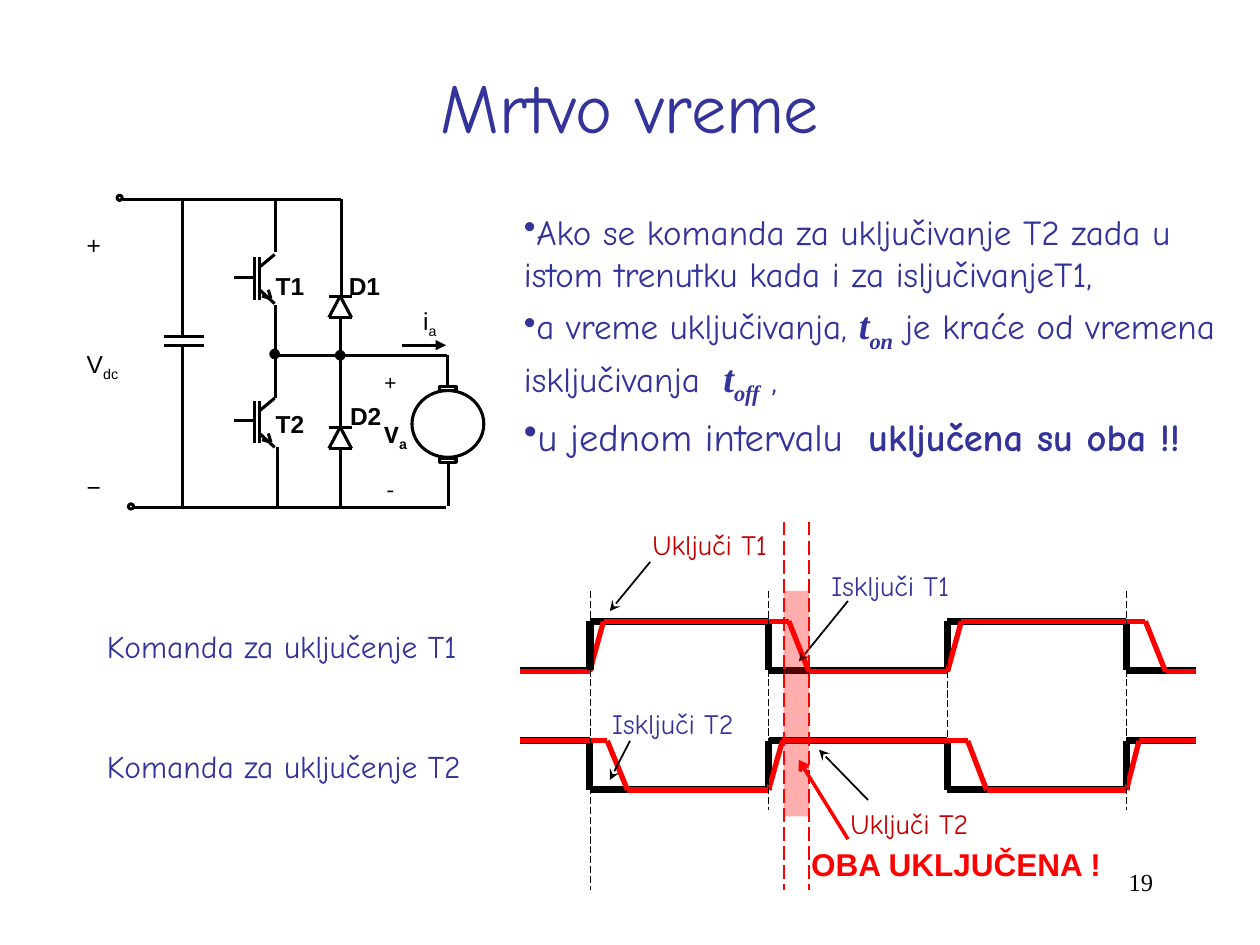
from itertools import pairwise
from lxml.etree import SubElement as Sub
from pptx import Presentation
from pptx.dml.color import RGBColor
from pptx.enum.dml import MSO_LINE as Dash
from pptx.enum.shapes import MSO_CONNECTOR as Link, MSO_SHAPE as Form
from pptx.enum.text import MSO_ANCHOR as Anchor, PP_ALIGN as Align
from pptx.oxml.ns import qn
from pptx.util import Inches, Pt

rgb = RGBColor.from_string
deck = Presentation()
deck.slide_width, deck.slide_height = Inches(10), Inches(7.5)
unit = deck.slide_width / 100
slide = deck.slides.add_slide(deck.slide_layouts[6])
shapes = slide.shapes

BLACK, WHITE, RED, BLUE, DARK = "000000", "FFFFFF", "FF0000", "333399", "C00000"
COMIC, SANS, SERIF, MONO = "Comic Neue", "Arial", "Times New Roman", "Courier New"


def wire(spots, hue=BLACK, wide=1.75, dash=None, head=None):
    for start, end in pairwise(spots):
        link = shapes.add_connector(
            Link.STRAIGHT, *[round(n * unit) for n in (*start, *end)])
        link.line.color.rgb = rgb(hue)
        link.line.width = Pt(wide)
        if dash:
            link.line.dash_style = dash
        props = link._element.spPr
        if head:
            Sub(props.find(qn("a:ln")), qn("a:tailEnd"), type=head)
        Sub(props, qn("a:effectLst"))


def write(place, paras, font=SANS, hue=BLACK, size=14, gap=0, mark=None, align=Align.LEFT):
    box = shapes.add_textbox(*[round(n * unit) for n in place])
    frame = box.text_frame
    frame.word_wrap = True
    for i, runs in enumerate(paras):
        para = frame.add_paragraph() if i else frame.paragraphs[0]
        para.alignment = align
        if i:
            para.space_before = Pt(gap)
        if mark:
            props = para._p.get_or_add_pPr()
            props.set("marL", "0")
            props.set("indent", "0")
            Sub(props, qn("a:buChar"), char=mark)
        for words, *style in runs:
            look = dict(style)
            run = para.add_run()
            run.text = words
            run.font.name = look.get("font", font)
            run.font.size = Pt(look.get("size", size))
            run.font.bold = look.get("bold", False)
            run.font.italic = look.get("italic", False)
            run.font.color.rgb = rgb(hue)
            if "base" in look:
                run._r.get_or_add_rPr().set("baseline", str(look["base"]))
    return frame


bold, low = ("bold", True), ("base", -25000)

high, deep = 49.3, 53.2
top, foot = 58.8, 62.7
edges = [46.8, 61, 75.2, 89.4]
left, right = 41.3, 94.9
for first, second in ((deep, high), (top, foot)):
    spots, now, then = [(left, first)], first, second
    for edge in edges:
        spots += [(edge, now), (edge, then)]
        now, then = then, now
    wire(spots + [(right, now)], wide=4)

wire([(left, 53.3), (46.8, 53.3), (47.9, high), (62.6, high), (64.2, 53.3),
      (75.2, 53.3), (76.3, high), (90.9, high), (92.5, 53.3), (right, 53.3)], RED, 3)
wire([(left, top), (48.2, top), (49.8, foot), (61, foot), (62.1, top),
      (76.8, top), (78.3, foot), (89.4, foot), (90.4, top), (right, top)], RED, 3)

title = write((7.5, 2.1, 85, 12.5), [[("Mrtvo vreme",)]], COMIC, BLUE, 40, align=Align.CENTER)
title.vertical_anchor = Anchor.MIDDLE

math = [("font", SERIF), ("size", 22), bold, ("italic", True)]
write((40.6, 16.2, 59.4, 22), [
    [("Ako se komanda za uključivanje T2 zada u istom trenutku kada i za isljučivanjeT1,",)],
    [("a vreme uključivanja, ",), ("t", *math), ("on", *math, low),
     (" je kraće od vremena isključivanja  ",), ("t", *math), ("off", *math, low), (" ,",)],
    [("u jednom intervalu  ", ("size", 22)), ("uključena su oba !!", ("size", 22), bold)],
], COMIC, BLUE, 20, gap=4, mark="•")
write((71.7, 68.3, 20.8, 5), [[("19",)]], SERIF, align=Align.RIGHT)

for name, x, y in (("T1", 20.9, 21), ("T2", 20.9, 32), ("D1", 26.7, 21), ("D2", 26.8, 31.3)):
    write((x, y, 4.7, 2.5), [[(name, bold)]])

for drop in (0, 11.4):
    for spots in (
        [(20.6, 23.8), (20.6, 20.4)],
        [(20.2, 23.8), (20.2, 20.4)],
        [(21.8, 24.1), (20.6, 23)],
        [(21.8, 20.2), (20.6, 21.2)],
        [(20.1, 22), (18.6, 22)],
        [(21.3, 23), (21.5, 23.7), (20.8, 23.5)],
    ):
        wire([(x, y + drop) for x, y in spots])

for drop in (0, 10.4):
    wire([(26.1, 23.5 + drop), (27.9, 23.5 + drop)])
    wire([(27.9, 25.2 + drop), (26.1, 25.2 + drop), (27, 23.5 + drop), (27.9, 25.2 + drop)])

for spots in (
    [(9.8, 15.8), (27.1, 15.8), (27.1, 23.4)],
    [(27, 25.2), (27, 33.8)],
    [(27, 35.7), (27, 40.3)],
    [(22, 28.2), (35.5, 28.2), (35.5, 30.7)],
    [(35.6, 36.8), (35.6, 40.2)],
    [(35.4, 40.3), (10.4, 40.3)],
    [(21.9, 15.8), (21.9, 20)],
    [(21.9, 24.2), (21.9, 31.6)],
    [(22, 35.5), (22, 40.3)],
    [(13, 26.7), (16.2, 26.7)],
    [(13, 27.4), (16.2, 27.4)],
    [(14.5, 15.8), (14.5, 26.6)],
    [(14.5, 27.5), (14.5, 40.3)],
):
    wire(spots)
wire([(31.9, 27.4), (35.4, 27.4)], head="triangle")

for form, hue, *place in (
    (Form.OVAL, WHITE, 32.7, 31, 5.7, 5.3),
    (Form.RECTANGLE, WHITE, 34.9, 30.7, 1.3, 0.3),
    (Form.RECTANGLE, WHITE, 34.9, 36.4, 1.3, 0.3),
    (Form.OVAL, WHITE, 9.3, 15.5, 0.4, 0.4),
    (Form.OVAL, WHITE, 10.2, 40, 0.4, 0.4),
    (Form.OVAL, BLACK, 21.5, 27.8, 0.6, 0.6),
    (Form.OVAL, BLACK, 26.7, 27.9, 0.6, 0.6),
):
    part = shapes.add_shape(form, *[round(n * unit) for n in place])
    part.shadow.inherit = False
    part.fill.solid()
    part.fill.fore_color.rgb = rgb(hue)
    part.line.color.rgb = rgb(BLACK)
    part.line.width = Pt(1.75)

write((29.5, 28.8, 4.9, 8.8), [
    [("+", ("size", 12))], [("V", bold), ("a", bold, low)], [("-", ("size", 12))],
], MONO, gap=14)
write((32.6, 23.8, 4.7, 2.4), [[("i",), ("a", low)]])
write((5.9, 17.8, 4.7, 14.2), [[("+",)], [("V",), ("dc", low)], [("−",)]], gap=51)

for name, y in (("T2", 58.8), ("T1", 49.3)):
    write((7.5, y, 32.7, 4), [[("Komanda za uključenje " + name,)]], COMIC, BLUE, 18)

for x, y, end in ((46.9, 46.9, 70.6), (61, 46.9, 64.3), (75.2, 50.9, 62.7), (89.4, 46.9, 64.3)):
    wire([(x, y), (x, end)], wide=0.5, dash=Dash.LONG_DASH)
wire([(46.9, high), (46.9, deep)], wide=4)

for words, hue, x, y, start, end in (
    ("Uključi T1", DARK, 50.8, 41.4, (51.6, 44.6), (48.4, 48.5)),
    ("Isključi T1", BLUE, 65, 44.6, (67.3, 47.7), (63.4, 52.5)),
    ("Isključi T2", BLUE, 47.6, 55.6, (50, 58.8), (48.4, 61.9)),
    ("Uključi T2", DARK, 66.5, 63.5, (68.9, 63.5), (65, 59.5)),
):
    write((x, y, 14.4, 3.7), [[(words,)]], COMIC, hue, 16)
    wire([start, end], wide=1, head="stealth")

for x in (64.2, 62.2):
    wire([(x, 41.4), (x, 70.6)], RED, 1, Dash.LONG_DASH)
band = shapes.add_shape(Form.RECTANGLE, *[round(n * unit) for n in (62.2, 46.9, 2, 17.9)])
band.shadow.inherit = False
band.fill.solid()
band.fill.fore_color.rgb = rgb(RED)
band.line.fill.background()
Sub(band._element.spPr.find(".//" + qn("a:srgbClr")), qn("a:alpha"), val="32000")

write((63.4, 66.6, 26, 4), [[("OBA UKLJUČENA !", bold)]], SANS, RED, 18)
wire([(67.3, 66.6), (63.4, 60.3)], RED, 2, head="arrow")

deck.save("out.pptx")
